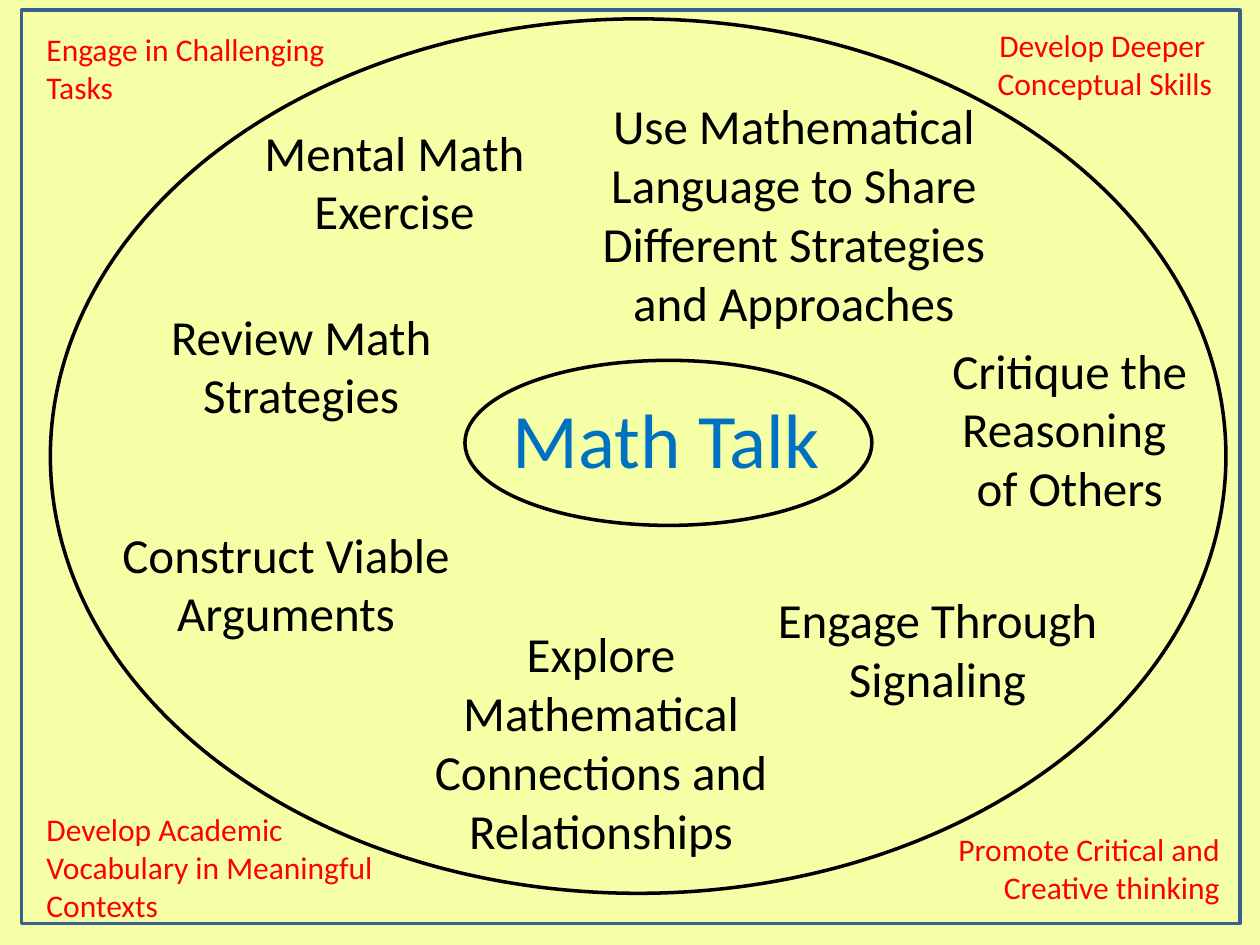
from pptx import Presentation
from pptx.dml.color import RGBColor
from pptx.enum.shapes import MSO_SHAPE
from pptx.enum.text import MSO_ANCHOR, MSO_AUTO_SIZE, PP_ALIGN
from pptx.util import Inches, Pt

TITLE_ONLY_LAYOUT = 5
BACKGROUND, BLACK, RED = "F5FFA6", "000000", "FF0000"
TITLE_BLUE, FRAME_BLUE = "0070C0", "3A5F8C"


def color(hex_text):
    return RGBColor.from_string(hex_text)


class SlideBuilder:
    """Places elements on a grid of 100 columns and 75 rows."""
    font_name = "Calibri"
    columns, rows = 100, 75

    def __init__(self, presentation):
        self.width = presentation.slide_width
        self.height = presentation.slide_height
        layout = presentation.slide_layouts[TITLE_ONLY_LAYOUT]
        self.slide = presentation.slides.add_slide(layout)
        fill = self.slide.background.fill
        fill.solid()
        fill.fore_color.rgb = color(BACKGROUND)

    def box(self, left, top, width, height):
        column, row = self.width / self.columns, self.height / self.rows
        return [int(length) for length in
                (left * column, top * row, width * column, height * row)]

    def fill_text(self, shape, lines, size, hex_text, alignment, wrap):
        frame = shape.text_frame
        frame.word_wrap = wrap
        frame.auto_size = MSO_AUTO_SIZE.SHAPE_TO_FIT_TEXT
        frame.vertical_anchor = MSO_ANCHOR.TOP
        for index, line in enumerate(lines):
            paragraph = frame.paragraphs[0] if index == 0 else frame.add_paragraph()
            paragraph.alignment = alignment
            run = paragraph.add_run()
            run.text = line
            run.font.name = self.font_name
            run.font.size = Pt(size)
            run.font.color.rgb = color(hex_text)

    def title(self, text, place):
        shape = self.slide.shapes.title
        shape.left, shape.top, shape.width, shape.height = self.box(*place)
        self.fill_text(shape, [text], 44, TITLE_BLUE, PP_ALIGN.LEFT, False)

    def text(self, lines, place, size, hex_text, alignment, wrap):
        shape = self.slide.shapes.add_textbox(*self.box(*place))
        self.fill_text(shape, lines, size, hex_text, alignment, wrap)

    def practice(self, lines, place):
        self.text(lines, place, 28, BLACK, PP_ALIGN.CENTER, True)

    def goal(self, lines, place, alignment):
        self.text(lines, place, 18, RED, alignment, False)

    def outline(self, preset, place, hex_text):
        shape = self.slide.shapes.add_shape(preset, *self.box(*place))
        shape.shadow.inherit = False
        shape.fill.background()
        shape.line.color.rgb = color(hex_text)
        shape.line.width = Pt(2)


def main():
    presentation = Presentation()
    presentation.slide_width, presentation.slide_height = Inches(10), Inches(7.5)
    builder = SlideBuilder(presentation)

    # Central topic
    builder.title("Math Talk", (39.7, 30.6, 26.6, 8.4))

    # Frame, inner and outer ellipses
    builder.outline(MSO_SHAPE.RECTANGLE, (1.7, 0.8, 96.7, 72.5), FRAME_BLUE)
    builder.outline(MSO_SHAPE.OVAL, (36.9, 28.6, 32.3, 13.1), BLACK)
    builder.outline(MSO_SHAPE.OVAL, (4, 1.5, 93.3, 69.4), BLACK)

    # Practices around the topic
    practices = [
        (["Mental Math", "Exercise"], (16.7, 9.2, 29.2, 10.4)),
        (["Engage Through Signaling"], (56.9, 46.3, 35, 10.4)),
        (["Review Math Strategies"], (6.4, 23.8, 35, 10.4)),
        (["Explore Mathematical Connections and Relationships"],
         (30.2, 49, 35, 19.9)),
        (["Construct Viable Arguments"], (5.2, 41.1, 35, 10.4)),
        (["Critique the Reasoning ", "of Others"], (67.4, 26.5, 35, 15.1)),
        (["Use Mathematical Language to Share Different Strategies and Approaches"],
         (45.5, 7.1, 35, 19.9)),
    ]
    for lines, place in practices:
        builder.practice(lines, place)

    # Goals in the corners
    goals = [
        (["Develop Deeper ", "Conceptual Skills"],
         (78, 1.6, 19.2, 7.1), PP_ALIGN.RIGHT),
        (["Promote Critical and", "Creative thinking"],
         (74.8, 65.4, 23, 7.1), PP_ALIGN.RIGHT),
        (["Develop Academic", "Vocabulary in Meaningful", "Contexts"],
         (2.7, 63.8, 28.8, 10.1), PP_ALIGN.LEFT),
        (["Engage in Challenging", "Tasks"],
         (2.7, 1.9, 25, 7.1), PP_ALIGN.LEFT),
    ]
    for lines, place, alignment in goals:
        builder.goal(lines, place, alignment)

    presentation.save("out.pptx")


if __name__ == "__main__":
    main()
